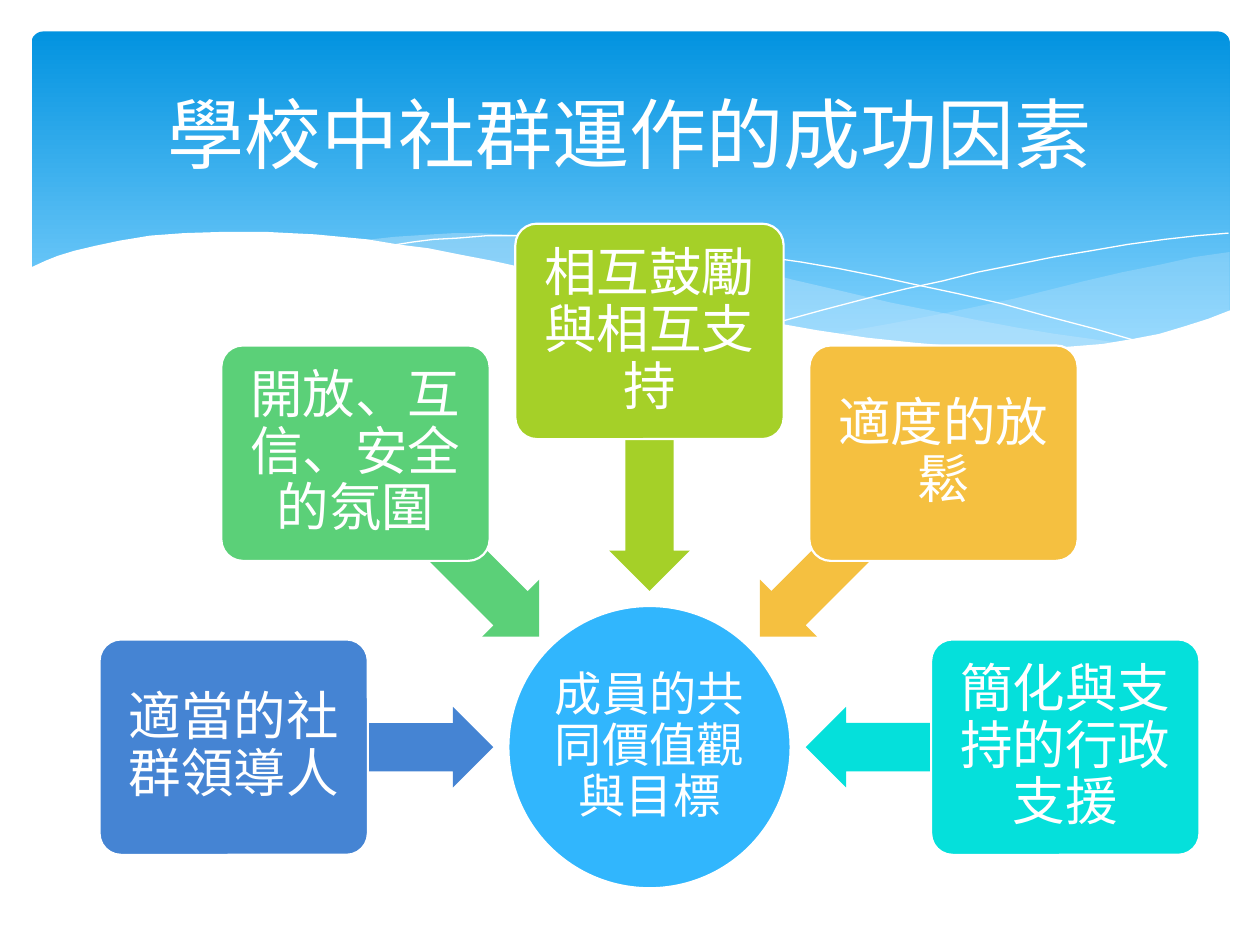
from math import cos, radians, sin

from lxml import etree
from pptx import Presentation
from pptx.dml.color import RGBColor
from pptx.enum.shapes import MSO_SHAPE
from pptx.enum.text import MSO_ANCHOR, PP_ALIGN
from pptx.oxml.ns import qn
from pptx.util import Inches, Pt

FONT = "Cabin"
WHITE = RGBColor(0xFF, 0xFF, 0xFF)
BANNER_TOP = RGBColor(0x02, 0x93, 0xE0)
BANNER_BOTTOM = RGBColor(0x83, 0xD3, 0xFE)
PALE_BLUE = RGBColor(0xC6, 0xE7, 0xFC)
HUB_BLUE = RGBColor(0x31, 0xB6, 0xFD)

# Factors run clockwise around the hub, starting at its left
FACTORS = [
    ("適當的社群領導人", RGBColor(0x45, 0x84, 0xD3)),
    ("開放、互信、安全的氛圍", RGBColor(0x5B, 0xD0, 0x78)),
    ("相互鼓勵與相互支持", RGBColor(0xA5, 0xD0, 0x28)),
    ("適度的放鬆", RGBColor(0xF5, 0xC0, 0x40)),
    ("簡化與支持的行政支援", RGBColor(0x05, 0xE0, 0xDB)),
]

# Wave outlines, in inches on the page
RIGHT_WAVE = [
    (9.76, 2), (9.48, 2.04), (9.21, 2.1), (8.91, 2.16), (8.61, 2.23),
    (8.05, 2.37), (7.53, 2.48), (7.06, 2.57), (6.61, 2.65), (6.91, 2.69),
    (7.19, 2.72), (7.45, 2.75), (7.69, 2.77), (8.03, 2.78), (8.35, 2.77),
    (8.63, 2.75), (8.89, 2.72), (9.13, 2.67), (9.35, 2.62), (9.49, 2.57),
    (9.63, 2.52), (9.76, 2.47),
]
MIDDLE_WAVE = [
    (8.93, 2.73), (8.66, 2.69), (8.37, 2.65), (8.07, 2.6), (7.75, 2.54),
    (7.41, 2.47), (7.06, 2.4), (6.68, 2.31), (6.29, 2.22), (5.98, 2.14),
    (5.69, 2.08), (5.41, 2.03), (5.14, 1.98), (4.89, 1.94), (4.65, 1.91),
    (4.42, 1.89), (4.2, 1.87), (3.99, 1.86), (3.8, 1.85), (3.61, 1.85),
    (3.44, 1.86), (3.13, 1.88), (2.86, 1.91), (3.23, 1.96), (3.62, 2.03),
    (4.04, 2.11), (4.49, 2.22), (4.91, 2.32), (5.3, 2.4), (5.66, 2.48),
    (6.01, 2.55), (6.34, 2.61), (6.65, 2.66), (6.95, 2.7), (7.22, 2.74),
    (7.48, 2.76), (7.73, 2.77), (7.96, 2.78), (8.28, 2.78), (8.57, 2.77),
    (8.76, 2.75),
]
FALLING_LINE = [
    (3.09, 1.95), (3.28, 1.92), (3.44, 1.9), (3.63, 1.89), (3.87, 1.87),
    (4.16, 1.87), (4.5, 1.88), (4.89, 1.9), (5.1, 1.92), (5.33, 1.94),
    (5.56, 1.97), (5.82, 2), (6.08, 2.04), (6.36, 2.08), (6.65, 2.13),
    (6.95, 2.19), (7.27, 2.26), (7.6, 2.33), (7.95, 2.41), (8.31, 2.51),
    (8.69, 2.61), (9.07, 2.72),
]
RISING_LINE = [
    (6.13, 2.57), (6.53, 2.46), (6.95, 2.35), (7.2, 2.29), (7.48, 2.23),
    (7.76, 2.16), (8.06, 2.1), (8.36, 2.04), (8.66, 1.99), (8.95, 1.94),
    (9.24, 1.9), (9.51, 1.87), (9.75, 1.85),
]
FRONT_WAVE = [
    (9.77, 2.46), (9.59, 2.53), (9.4, 2.59), (9.2, 2.65), (8.99, 2.69),
    (8.75, 2.73), (8.5, 2.75), (8.23, 2.77), (7.93, 2.76), (7.61, 2.75),
    (7.26, 2.72), (6.88, 2.68), (6.48, 2.62), (6.03, 2.54), (5.55, 2.45),
    (5.03, 2.33), (4.47, 2.2), (4.18, 2.13), (3.91, 2.07), (3.65, 2.02),
    (3.4, 1.97), (3.16, 1.94), (2.92, 1.9), (2.71, 1.88), (2.5, 1.86),
    (2.3, 1.85), (2.11, 1.84), (1.77, 1.84), (1.46, 1.85), (1.19, 1.87),
    (0.95, 1.91), (0.76, 1.95), (0.59, 1.99), (0.46, 2.03), (0.36, 2.07),
    (0.23, 2.13), (0.23, 3.29), (9.77, 3.29),
]


def set_fill(shape, color, alpha=100):
    shape.shadow.inherit = False
    shape.line.fill.background()
    shape.fill.solid()
    shape.fill.fore_color.rgb = color
    if alpha < 100:
        tint = shape.fill._xPr.find(".//" + qn("a:srgbClr"))
        etree.SubElement(tint, qn("a:alpha"), val=str(alpha * 1000))


def add_outline(page, points, closed):
    corners = [(Inches(x), Inches(y)) for x, y in points]
    builder = page.shapes.build_freeform(*corners[0])
    builder.add_line_segments(corners[1:], close=closed)
    return builder.convert_to_shape()


def add_centered(page, kind, x, y, width, height):
    """Add a preset shape around a centre given in inches."""
    return page.shapes.add_shape(
        kind, Inches(x - width / 2), Inches(y - height / 2),
        Inches(width), Inches(height))


def style_label(shape, text, size, inset):
    shape.line.color.rgb = WHITE
    shape.line.width = Pt(1.25)
    frame = shape.text_frame
    frame.word_wrap = True
    frame.vertical_anchor = MSO_ANCHOR.MIDDLE
    frame.margin_left = frame.margin_right = Inches(inset)
    frame.margin_top = frame.margin_bottom = Inches(inset)
    frame.text = text
    para = frame.paragraphs[0]
    para.line_spacing = 0.9
    style_paragraph(para, size)


def style_paragraph(para, size):
    para.alignment = PP_ALIGN.CENTER
    para.font.name = FONT
    para.font.size = Pt(size)
    para.font.color.rgb = WHITE


def add_banner(page, left, top, width, height):
    # Gradient panel
    panel = page.shapes.add_shape(
        MSO_SHAPE.ROUNDED_RECTANGLE,
        Inches(left), Inches(top), Inches(width), Inches(height))
    panel.adjustments[0] = 0.034
    panel.shadow.inherit = False
    panel.line.fill.background()
    panel.fill.gradient()
    panel.fill.gradient_angle = 270
    start, end = panel.fill.gradient_stops
    start.color.rgb, start.position = BANNER_TOP, 0
    end.color.rgb, end.position = BANNER_BOTTOM, 0.9

    # Translucent waves, thin lines, then the white wave in front
    for points, alpha in ((RIGHT_WAVE, 29), (MIDDLE_WAVE, 40)):
        set_fill(add_outline(page, points, True), PALE_BLUE, alpha)
    for points in (FALLING_LINE, RISING_LINE):
        curve = add_outline(page, points, False)
        curve.shadow.inherit = False
        curve.fill.background()
        curve.line.color.rgb = WHITE
        curve.line.width = Pt(0)
    set_fill(add_outline(page, FRONT_WAVE, True), WHITE)


def add_factor_wheel(page, left, top, width, height):
    # The hub sits at the bottom centre of the box
    hub_size = 2.24
    hub_x, hub_y = left + width / 2, top + height - hub_size / 2
    hub = add_centered(page, MSO_SHAPE.OVAL, hub_x, hub_y, hub_size, hub_size)
    set_fill(hub, HUB_BLUE)
    style_label(hub, "成員的共同價值觀與目標", 27, 0.02)

    # Each factor is 45 degrees on, with an arrow pointing to the hub
    for index, (text, color) in enumerate(FACTORS):
        angle = 180 + 45 * index
        across, down = cos(radians(angle)), sin(radians(angle))
        arrow = add_centered(page, MSO_SHAPE.LEFT_ARROW, hub_x + 2.27 * across,
                             hub_y + 2.27 * down, 2.06, 0.64)
        arrow.adjustments[0], arrow.adjustments[1] = 0.6, 0.5
        arrow.rotation = angle % 360
        set_fill(arrow, color)

        box = add_centered(page, MSO_SHAPE.ROUNDED_RECTANGLE,
                           hub_x + 3.3 * across, hub_y + 3.3 * down, 2.13, 1.71)
        box.adjustments[0] = 0.1
        set_fill(box, color)
        style_label(box, text, 30, 0.06)


def place_title(page, left, top, width, height):
    title = page.shapes.title
    title.left, title.top = Inches(left), Inches(top)
    title.width, title.height = Inches(width), Inches(height)
    title.text_frame.text = "學校中社群運作的成功因素"
    title.text_frame.vertical_anchor = MSO_ANCHOR.MIDDLE
    style_paragraph(title.text_frame.paragraphs[0], 44)
    # Bring the title in front of the banner
    title.element.getparent().append(title.element)


def main():
    deck = Presentation()
    deck.slide_width, deck.slide_height = Inches(10), Inches(7.5)
    page = deck.slides.add_slide(deck.slide_layouts[5])
    add_banner(page, 0.25, 0.25, 9.51, 2.7)
    add_factor_wheel(page, 0.79, 1.78, 8.73, 5.27)
    place_title(page, 0.5, 0.37, 9, 1.37)
    deck.save("out.pptx")


if __name__ == "__main__":
    main()
